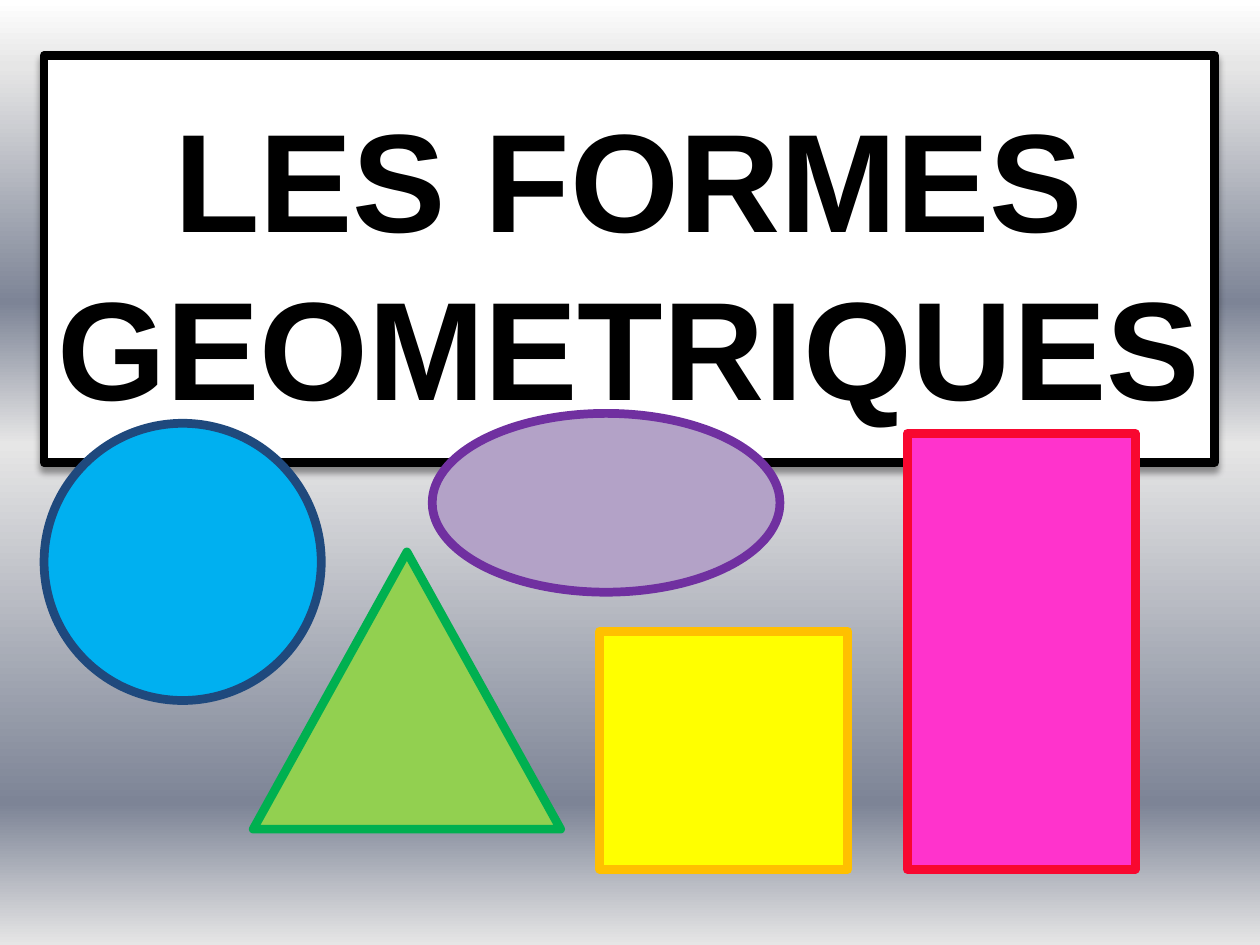
from lxml import etree
from pptx import Presentation
from pptx.dml.color import RGBColor
from pptx.enum.shapes import MSO_SHAPE
from pptx.enum.text import MSO_ANCHOR, MSO_AUTO_SIZE, PP_ALIGN
from pptx.oxml import parse_xml
from pptx.oxml.ns import nsdecls, qn
from pptx.util import Pt

ELLIPSE, TRIANGLE, RECTANGLE = MSO_SHAPE.OVAL, MSO_SHAPE.ISOSCELES_TRIANGLE, MSO_SHAPE.RECTANGLE

THEME = {
    "font": "Arial",
    "title_size": 80,
    "title_leading": 96,
    "outline": 5,
    "ink": "000000",
    "paper": "FFFFFF",
    "sky": [(0, "FFFFFF"), (7, "E6E6E6"), (32, "7D8496"),
            (47, "E6E6E6"), (85, "7D8496"), (100, "E6E6E6")],
}

PAGE_SIZE = (720, 540)
TITLE_LINES = ["LES FORMES", "GEOMETRIQUES"]
TITLE_AREA = (25.2, 31.7, 668.9, 232.6)
FIGURES = [
    (ELLIPSE, (25.2, 241.9, 158.4, 158.4), "00B0F0", "1F497D"),
    (TRIANGLE, (144.7, 315.4, 175.7, 158.4), "92D050", "00B050"),
    (RECTANGLE, (342.7, 360.7, 141.8, 136.1), "FFFF00", "FFC000"),
    (RECTANGLE, (518.4, 247.7, 130.3, 249.1), "FF33CC", "F80830"),
    (ELLIPSE, (247, 236.2, 198.7, 102.2), "B3A2C7", "7030A0"),
]


def paint(shape, fill, outline):
    shape.fill.solid()
    shape.fill.fore_color.rgb = RGBColor.from_string(fill)
    shape.line.color.rgb = RGBColor.from_string(outline)
    shape.line.width = Pt(THEME["outline"])


def paint_background(page):
    fill = page.background.fill
    fill.gradient()
    gradient = page.element.find(".//" + qn("a:gradFill"))
    stops = gradient.find(qn("a:gsLst"))
    for stop in list(stops):
        stops.remove(stop)
    for position, color in THEME["sky"]:
        stop = etree.SubElement(stops, qn("a:gs"), pos=str(position * 1000))
        etree.SubElement(stop, qn("a:srgbClr"), val=color)
    direction = gradient.find(qn("a:lin"))
    direction.set("ang", "5400000")
    direction.set("scaled", "0")


def add_shadow(shape):
    shape.element.spPr.append(parse_xml(
        f'<a:effectLst {nsdecls("a")}>'
        f'<a:outerShdw blurRad="{Pt(4)}" dist="{Pt(3)}" dir="5400000" rotWithShape="0">'
        f'<a:srgbClr val="{THEME["ink"]}"><a:alpha val="40000"/></a:srgbClr>'
        '</a:outerShdw></a:effectLst>'))


def add_title(page):
    box = page.shapes.title
    box.left, box.top, box.width, box.height = map(Pt, TITLE_AREA)
    paint(box, THEME["paper"], THEME["ink"])
    add_shadow(box)
    frame = box.text_frame
    frame.word_wrap = True
    frame.auto_size = MSO_AUTO_SIZE.NONE
    frame.vertical_anchor = MSO_ANCHOR.MIDDLE
    frame.margin_top, frame.margin_bottom = Pt(5.6), Pt(3.6)
    para = frame.paragraphs[0]
    para.alignment = PP_ALIGN.CENTER
    para.line_spacing = Pt(THEME["title_leading"])
    for index, line in enumerate(TITLE_LINES):
        if index:
            para.add_line_break()
        span = para.add_run()
        span.text = line
        span.font.name = THEME["font"]
        span.font.size = Pt(THEME["title_size"])
        span.font.bold = True
        span.font.color.rgb = RGBColor.from_string(THEME["ink"])


def main():
    deck = Presentation()
    deck.slide_width, deck.slide_height = map(Pt, PAGE_SIZE)
    page = deck.slides.add_slide(deck.slide_layouts[0])
    subtitle = page.placeholders[1].element
    subtitle.getparent().remove(subtitle)
    paint_background(page)
    add_title(page)
    for kind, area, fill, outline in FIGURES:
        figure = page.shapes.add_shape(kind, *map(Pt, area))
        figure.shadow.inherit = False
        paint(figure, fill, outline)
    deck.save("out.pptx")


if __name__ == "__main__":
    main()
